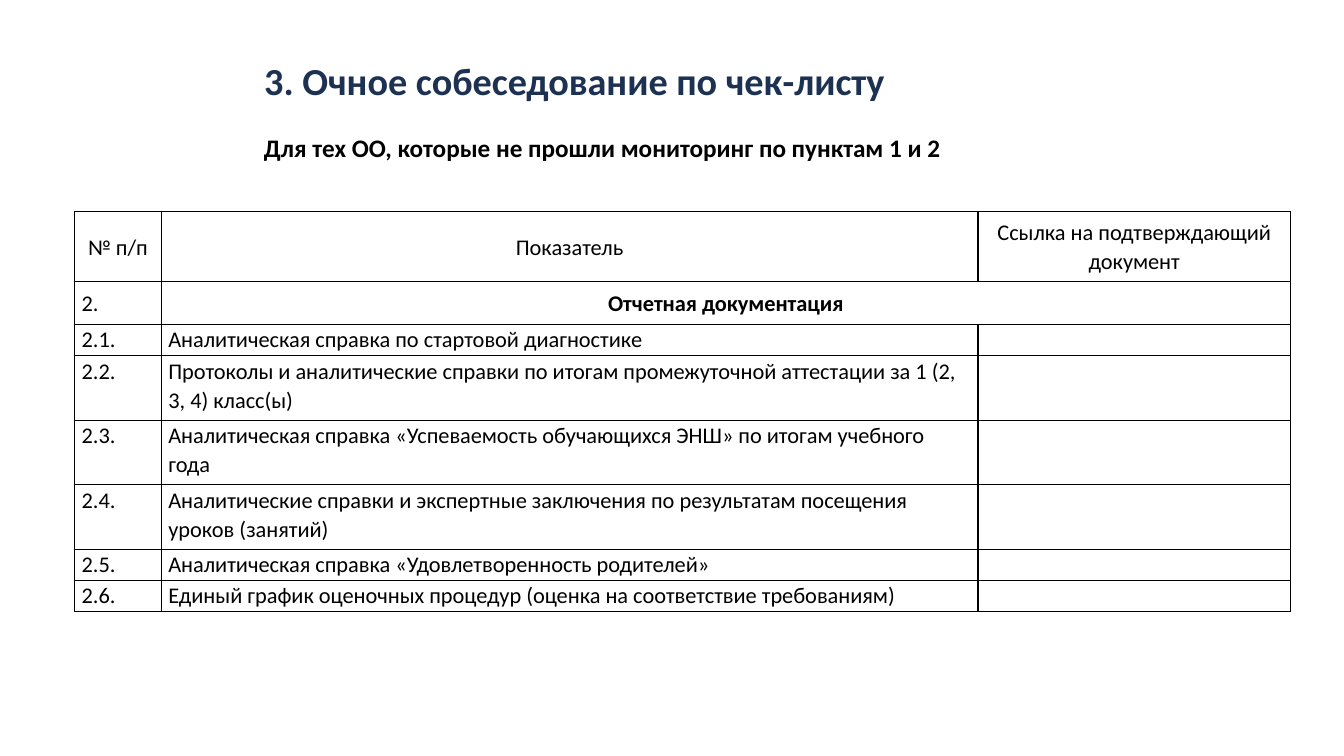
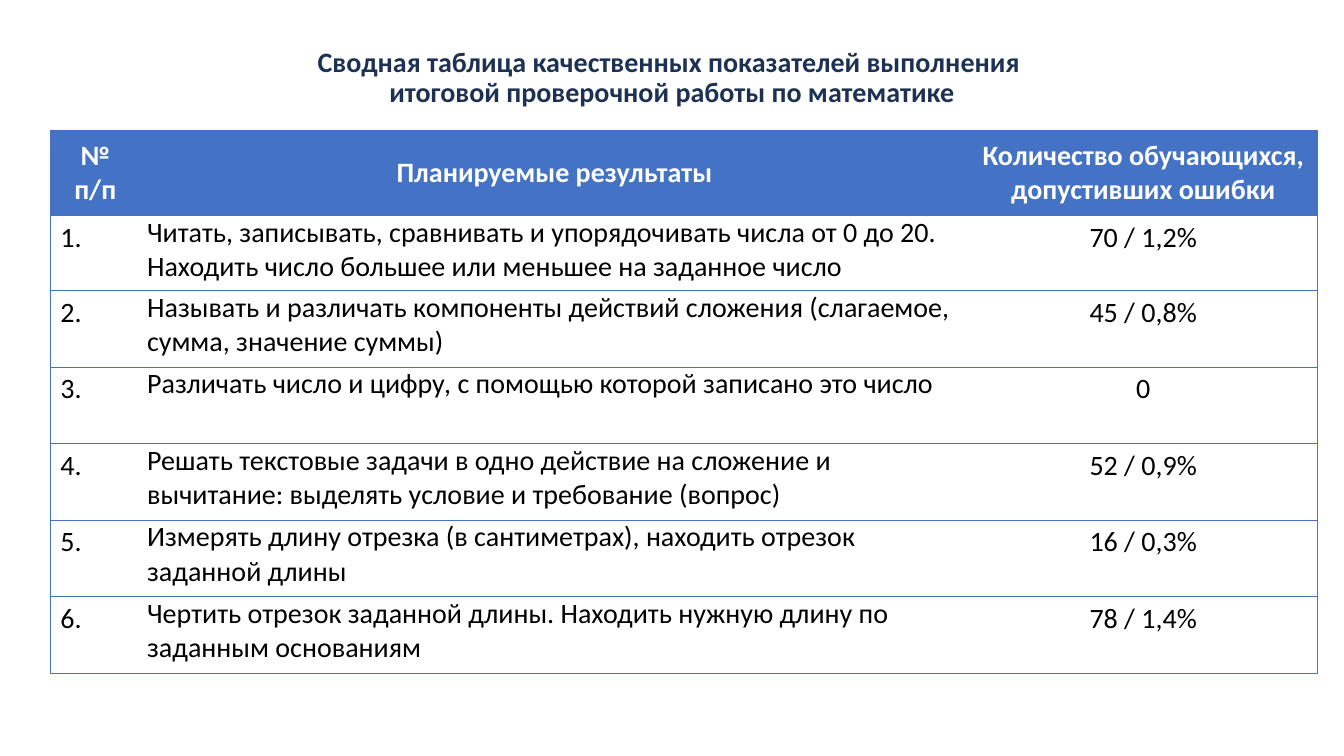
from lxml import etree
from pptx import Presentation
from pptx.dml.color import RGBColor
from pptx.enum.text import MSO_ANCHOR, MSO_AUTO_SIZE, PP_ALIGN
from pptx.oxml.ns import qn
from pptx.util import Inches, Pt

LEFT, CENTER = PP_ALIGN.LEFT, PP_ALIGN.CENTER
TOP, MIDDLE = MSO_ANCHOR.TOP, MSO_ANCHOR.MIDDLE
NO_FIT, GROW = MSO_AUTO_SIZE.NONE, MSO_AUTO_SIZE.SHAPE_TO_FIT_TEXT

FONT = "Calibri"
NAVY, BLUE, BLACK, WHITE = "1D3152", "4472C4", "000000", "FFFFFF"
TITLE_ONLY = 5
TIGHT = (0.07, 0)
ROOMY = (0.1, 0.05)

INTERVIEW_TITLE = ["3. Очное собеседование по чек-листу"]
INTERVIEW_NOTE = "Для тех ОО, которые не прошли мониторинг по пунктам 1 и 2"
CHECKLIST_HEADER = ["№ п/п", "Показатель", "Ссылка на подтверждающий документ"]
CHECKLIST_SECTION = ["2.", "Отчетная документация"]
CHECKLIST = [
    "Аналитическая справка по стартовой диагностике",
    "Протоколы и аналитические справки по итогам промежуточной аттестации за 1 (2, 3, 4) класс(ы)",
    "Аналитическая справка «Успеваемость обучающихся ЭНШ» по итогам учебного года",
    "Аналитические справки и экспертные заключения по результатам посещения уроков (занятий)",
    "Аналитическая справка «Удовлетворенность родителей»",
    "Единый график оценочных процедур (оценка на соответствие требованиям)",
]
CHECKLIST_COLS = [0.86, 8.1, 3.1]
CHECKLIST_ROWS = [0.69, 0.43, 0.31, 0.64, 0.64, 0.64, 0.31, 0.31]

SUMMARY_TITLE = [
    "Сводная таблица качественных показателей выполнения ",
    "итоговой проверочной работы по математике",
]
SUMMARY_HEADER = ["№ п/п", "Планируемые результаты", "Количество обучающихся, допустивших ошибки"]
SUMMARY = [
    (["Читать, записывать, сравнивать и упорядочивать числа от 0 до 20.",
      "Находить число большее или меньшее на заданное число"], "70 / 1,2%"),
    (["Называть и различать компоненты действий сложения (слагаемое, сумма, значение суммы)"],
     "45 / 0,8%"),
    (["Различать число и цифру, с помощью которой записано это число"], "0"),
    (["Решать текстовые задачи в одно действие на сложение и вычитание: "
      "выделять условие и требование (вопрос)"], "52 / 0,9%"),
    (["Измерять длину отрезка (в сантиметрах), находить отрезок заданной длины"], "16 / 0,3%"),
    (["Чертить отрезок заданной длины. Находить нужную длину по заданным основаниям"],
     "78 / 1,4%"),
]
SUMMARY_COLS = [0.89, 8.22, 3.46]
SUMMARY_ROWS = [0.85, 0.74] + [0.76] * 5


def rgb(color):
    return RGBColor.from_string(color)


def add_run(paragraph, text, size, color=BLACK, bold=False):
    run = paragraph.add_run()
    run.text = text
    font = run.font
    font.name, font.size, font.bold = FONT, Pt(size), bold
    font.color.rgb = rgb(color)


def add_titled_slide(prs, lines, box, size, align):
    slide = prs.slides.add_slide(prs.slide_layouts[TITLE_ONLY])
    title = slide.shapes.title
    title.left, title.top, title.width, title.height = map(Inches, box)
    frame = title.text_frame
    frame.auto_size = NO_FIT
    frame.vertical_anchor = MIDDLE
    paragraph = frame.paragraphs[0]
    paragraph.alignment = align
    paragraph.line_spacing = 0.9
    for index, line in enumerate(lines):
        if index:
            paragraph.add_line_break()
        add_run(paragraph, line, size, NAVY, True)
    return slide


def add_plain_table(slide, left, top, cols, rows):
    frame = slide.shapes.add_table(len(rows), len(cols), Inches(left), Inches(top),
                                   Inches(sum(cols)), Inches(sum(rows)))
    table = frame.table
    table.first_row = table.horz_banding = False
    for column, width in zip(table.columns, cols):
        column.width = Inches(width)
    for row, height in zip(table.rows, rows):
        row.height = Inches(height)
    return table


def set_borders(cell, sides, color, width):
    """Draw the named sides (letters of LRTB) and clear the others."""
    properties = cell._tc.get_or_add_tcPr()
    for side in "LRTB":
        line = etree.SubElement(properties, qn(f"a:ln{side}"), w=str(Pt(width)))
        if side in sides:
            fill = etree.SubElement(line, qn("a:solidFill"))
            etree.SubElement(fill, qn("a:srgbClr"), val=color)
        else:
            etree.SubElement(line, qn("a:noFill"))


def fill_cell(cell, lines, size, align=LEFT, anchor=TOP, insets=ROOMY,
              spacing=1.0, color=BLACK, bold=False, fill=None):
    cell.margin_left = cell.margin_right = Inches(insets[0])
    cell.margin_top = cell.margin_bottom = Inches(insets[1])
    cell.vertical_anchor = anchor
    if fill:
        cell.fill.solid()
        cell.fill.fore_color.rgb = rgb(fill)
    else:
        cell.fill.background()
    frame = cell.text_frame
    for index, line in enumerate(lines):
        paragraph = frame.add_paragraph() if index else frame.paragraphs[0]
        paragraph.alignment = align
        paragraph.line_spacing = spacing
        add_run(paragraph, line, size, color, bold)


def build_interview(prs):
    slide = add_titled_slide(prs, INTERVIEW_TITLE, (2.52, 0.49, 9.02, 0.66), 27.3, LEFT)
    note = slide.shapes.add_textbox(Inches(2.52), Inches(1.26), Inches(7), Inches(0.4))
    note.text_frame.word_wrap = False
    note.text_frame.auto_size = GROW
    add_run(note.text_frame.paragraphs[0], INTERVIEW_NOTE, 18, bold=True)

    table = add_plain_table(slide, 0.74, 2.1, CHECKLIST_COLS, CHECKLIST_ROWS)
    items = [[f"2.{number}.", item] for number, item in enumerate(CHECKLIST, 1)]
    for r, texts in enumerate([CHECKLIST_HEADER, CHECKLIST_SECTION] + items):
        for c in range(len(CHECKLIST_COLS)):
            cell = table.cell(r, c)
            set_borders(cell, "LRTB", BLACK, 1)
            section_name = r == 1 and c == 1
            fill_cell(cell, texts[c:c + 1], 16,
                      align=CENTER if r == 0 or section_name else LEFT,
                      anchor=MIDDLE if r < 2 else TOP,
                      insets=TIGHT, spacing=1.07, bold=section_name)
    table.cell(1, 1).merge(table.cell(1, 2))


def build_summary(prs):
    slide = add_titled_slide(prs, SUMMARY_TITLE, (0.77, 0.27, 11.79, 1.01), 20, CENTER)
    table = add_plain_table(slide, 0.5, 1.29, SUMMARY_COLS, SUMMARY_ROWS)
    for c, sides in enumerate(("LTB", "TB", "RTB")):
        for r in range(len(SUMMARY_ROWS)):
            set_borders(table.cell(r, c), sides, BLUE, 0.5)
        fill_cell(table.cell(0, c), [SUMMARY_HEADER[c]], 20, CENTER, MIDDLE,
                  color=WHITE, bold=True, fill=BLUE)
    for number, (results, errors) in enumerate(SUMMARY, 1):
        fill_cell(table.cell(number, 0), [f"{number}."], 20)
        fill_cell(table.cell(number, 1), results, 20, insets=TIGHT)
        fill_cell(table.cell(number, 2), [errors], 20, CENTER)


def main():
    prs = Presentation()
    prs.slide_width, prs.slide_height = Inches(13.33), Inches(7.5)
    build_interview(prs)
    build_summary(prs)
    prs.save("out.pptx")


if __name__ == "__main__":
    main()
